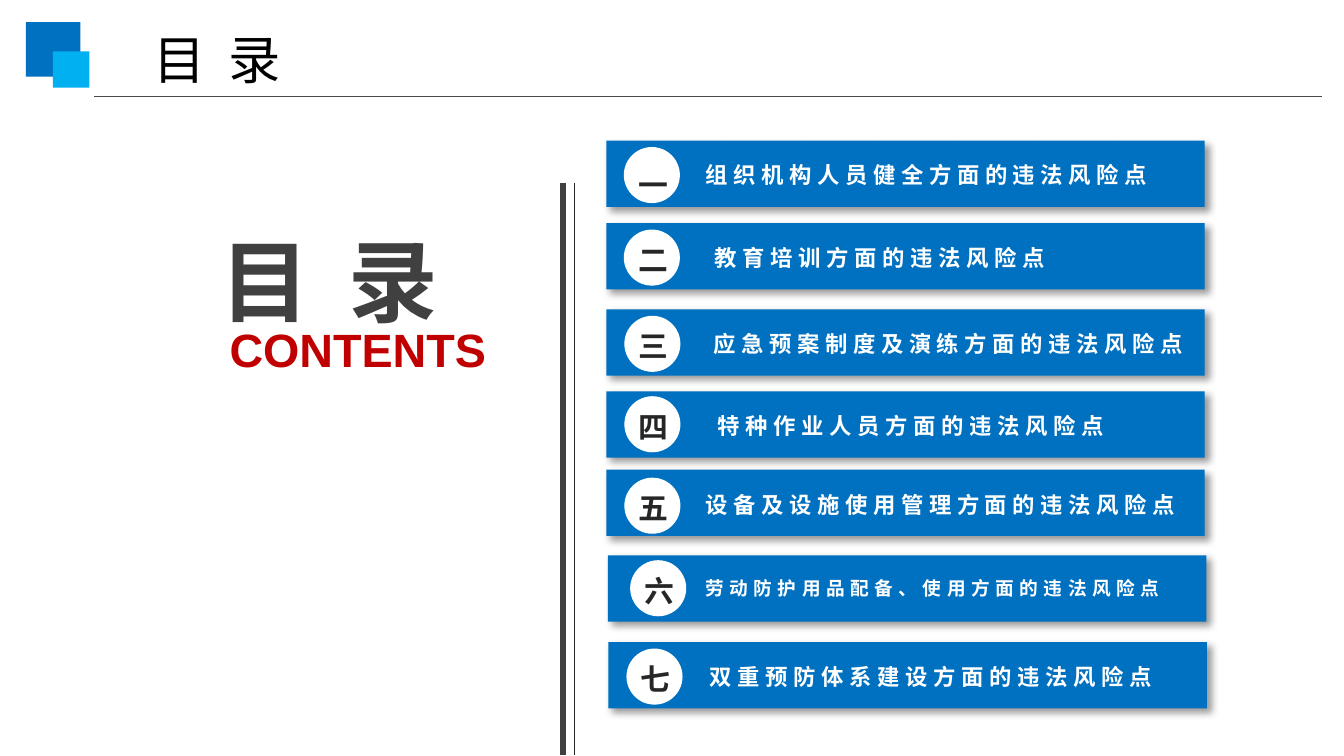
import pptx
import pptx.util
import pptx.dml.color
import pptx.enum.shapes
import pptx.enum.text
import pptx.oxml
import pptx.oxml.ns

Cm, Pt = pptx.util.Cm, pptx.util.Pt
RGBColor = pptx.dml.color.RGBColor
SHAPE = pptx.enum.shapes.MSO_SHAPE
ALIGN = pptx.enum.text.PP_ALIGN

BLUE = RGBColor(0x00, 0x70, 0xC0)
SKY = RGBColor(0x00, 0xB0, 0xF0)
RED = RGBColor(0xC0, 0x00, 0x00)
WHITE = RGBColor(0xFF, 0xFF, 0xFF)
BLACK = RGBColor(0x00, 0x00, 0x00)
INK = RGBColor(0x26, 0x26, 0x26)
GRAY = RGBColor(0x40, 0x40, 0x40)
RULE = RGBColor(0x4D, 0x49, 0x48)
CJK, LATIN = "Noto Sans CJK SC", "Arial"

HEADING = "目 录"
SUBHEADING = "CONTENTS"
# numeral, label, label size; then in cm: bar left, bar top, circle left,
# circle top, label left
ENTRIES = [
    ("一", "组织机构人员健全方面的违法风险点", 12, 11.46, 2.66, 11.79, 2.78, 13.08),
    ("二", "教育培训方面的违法风险点", 12, 11.46, 4.22, 11.79, 4.34, 13.26),
    ("三", "应急预案制度及演练方面的违法风险点", 12, 11.46, 5.85, 11.8, 5.97, 13.23),
    ("四", "特种作业人员方面的违法风险点", 12, 11.46, 7.4, 11.8, 7.49, 13.31),
    ("五", "设备及设施使用管理方面的违法风险点", 12, 11.46, 8.88, 11.8, 9.03, 13.08),
    ("六", "劳动防护用品配备、使用方面的违法风险点", 10, 11.49, 10.5, 11.91, 10.59, 13.08),
    ("七", "双重预防体系建设方面的违法风险点", 12, 11.5, 12.14, 11.84, 12.26, 13.16),
]
BAR_WIDTH, BAR_HEIGHT, CIRCLE = 11.31, 1.25, 1.06
NUMERAL_WIDTH, NUMERAL_HEIGHT, NUMERAL_RISE = 1.68, 1.27, 0.23
FIRST_NUMERAL_RISE = 0.1
LABEL_SPACING, INSET = 3, 0.25
DIVIDERS = [(10.64, GRAY, 3), (10.85, INK, 0.25)]

SHADOW = (
    f'<a:effectLst {pptx.oxml.ns.nsdecls("a")}><a:outerShdw blurRad="{Pt(4)}" '
    f'dist="{Pt(3)}" dir="2700000" algn="tl" rotWithShape="0">'
    '<a:srgbClr val="000000"><a:alpha val="40000"/></a:srgbClr>'
    '</a:outerShdw></a:effectLst>'
)
NO_EFFECT = f'<a:effectLst {pptx.oxml.ns.nsdecls("a")}/>'


def write(box, text, *, size, color, font=CJK, bold=False, spacing=0,
          align=ALIGN.LEFT, line_spacing=1.0, wrap=False):
    frame = box.text_frame
    frame.word_wrap = wrap
    frame.auto_size = pptx.enum.text.MSO_AUTO_SIZE.SHAPE_TO_FIT_TEXT
    frame.vertical_anchor = pptx.enum.text.MSO_ANCHOR.TOP
    para = frame.paragraphs[0]
    para.alignment = align
    para.line_spacing = line_spacing
    span = para.add_run()
    span.text = text
    span.font.size = Pt(size)
    span.font.bold = bold
    span.font.color.rgb = color
    span.font.name = font
    properties = span.font._element
    east_asian = pptx.oxml.parse_xml(
        f'<a:ea {pptx.oxml.ns.nsdecls("a")} typeface="{font}"/>')
    properties.find(pptx.oxml.ns.qn("a:latin")).addnext(east_asian)
    if spacing:
        properties.set("spc", str(spacing * 100))


def add_text(shapes, text, left, top, width, height, **style):
    box = shapes.add_textbox(Cm(left), Cm(top), Cm(width), Cm(height))
    write(box, text, **style)


def add_block(shapes, kind, left, top, width, height, color):
    block = shapes.add_shape(kind, Cm(left), Cm(top), Cm(width), Cm(height))
    block.shadow.inherit = False
    block.fill.solid()
    block.fill.fore_color.rgb = color
    block.line.fill.background()
    return block


def add_line(shapes, start, end, color, weight):
    line = shapes.add_connector(pptx.enum.shapes.MSO_CONNECTOR.STRAIGHT,
                                Cm(start[0]), Cm(start[1]), Cm(end[0]), Cm(end[1]))
    line.line.color.rgb = color
    line.line.width = Pt(weight)
    line._element.spPr.append(pptx.oxml.parse_xml(NO_EFFECT))


def add_entry(page, numeral, label, size, left, top, circle_left, circle_top,
              label_left, rise):
    shapes = page.shapes.add_group_shape().shapes
    bar = add_block(shapes, SHAPE.RECTANGLE, left, top, BAR_WIDTH, BAR_HEIGHT, BLUE)
    properties = bar._element.spPr
    properties.remove(properties.find(pptx.oxml.ns.qn("a:effectLst")))
    properties.append(pptx.oxml.parse_xml(SHADOW))
    add_block(shapes, SHAPE.OVAL, circle_left, circle_top, CIRCLE, CIRCLE, WHITE)
    add_text(shapes, numeral, circle_left - (NUMERAL_WIDTH - CIRCLE) / 2 + 0.02,
             circle_top - rise, NUMERAL_WIDTH, NUMERAL_HEIGHT, size=16, color=INK,
             bold=True, align=ALIGN.CENTER, line_spacing=1.5, wrap=True)
    label_width = Pt(len(label) * (size + LABEL_SPACING)).cm + 2 * INSET
    label_height = 0.77 if size == 12 else 0.68
    add_text(shapes, label, label_left, top + 0.27, label_width, label_height,
             size=size, color=WHITE, bold=True, spacing=LABEL_SPACING)


def main():
    deck = pptx.Presentation()
    deck.slide_width, deck.slide_height = Cm(25.4), Cm(14.29)
    page = deck.slides.add_slide(deck.slide_layouts[5])

    add_block(page.shapes, SHAPE.RECTANGLE, 0.49, 0.42, 1.03, 1.03, BLUE)
    add_block(page.shapes, SHAPE.RECTANGLE, 1.0, 0.97, 0.69, 0.69, SKY)
    add_line(page.shapes, (24.98, 1.82), (1.78, 1.82), RULE, 0.75)

    title = page.shapes.title
    title.left, title.top, title.width, title.height = Cm(2.64), Cm(0.38), Cm(3.15), Cm(1.45)
    write(title, HEADING, size=28, color=BLACK, spacing=3)

    caption = page.shapes.add_group_shape().shapes
    add_text(caption, HEADING, 3.91, 4.14, 4.95, 2.31,
             size=48, color=GRAY, bold=True, spacing=5)
    add_text(caption, SUBHEADING, 4.09, 5.94, 5.38, 1.32,
             size=25, color=RED, font=LATIN, bold=True)

    dividers = page.shapes.add_group_shape().shapes
    for x, color, weight in DIVIDERS:
        add_line(dividers, (x, 3.45), (x, 14.27), color, weight)

    for index, entry in enumerate(ENTRIES):
        rise = NUMERAL_RISE if index else FIRST_NUMERAL_RISE
        add_entry(page, *entry, rise)

    deck.save("out.pptx")


if __name__ == "__main__":
    main()
